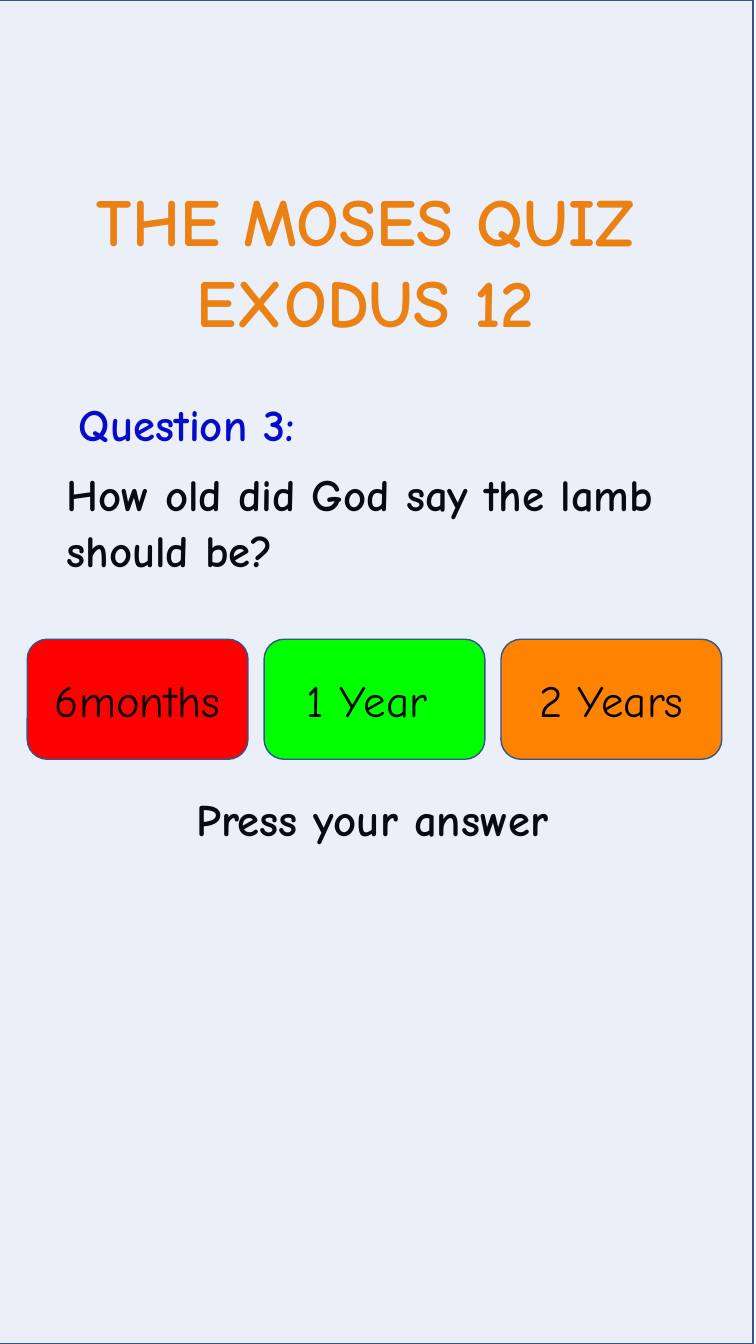
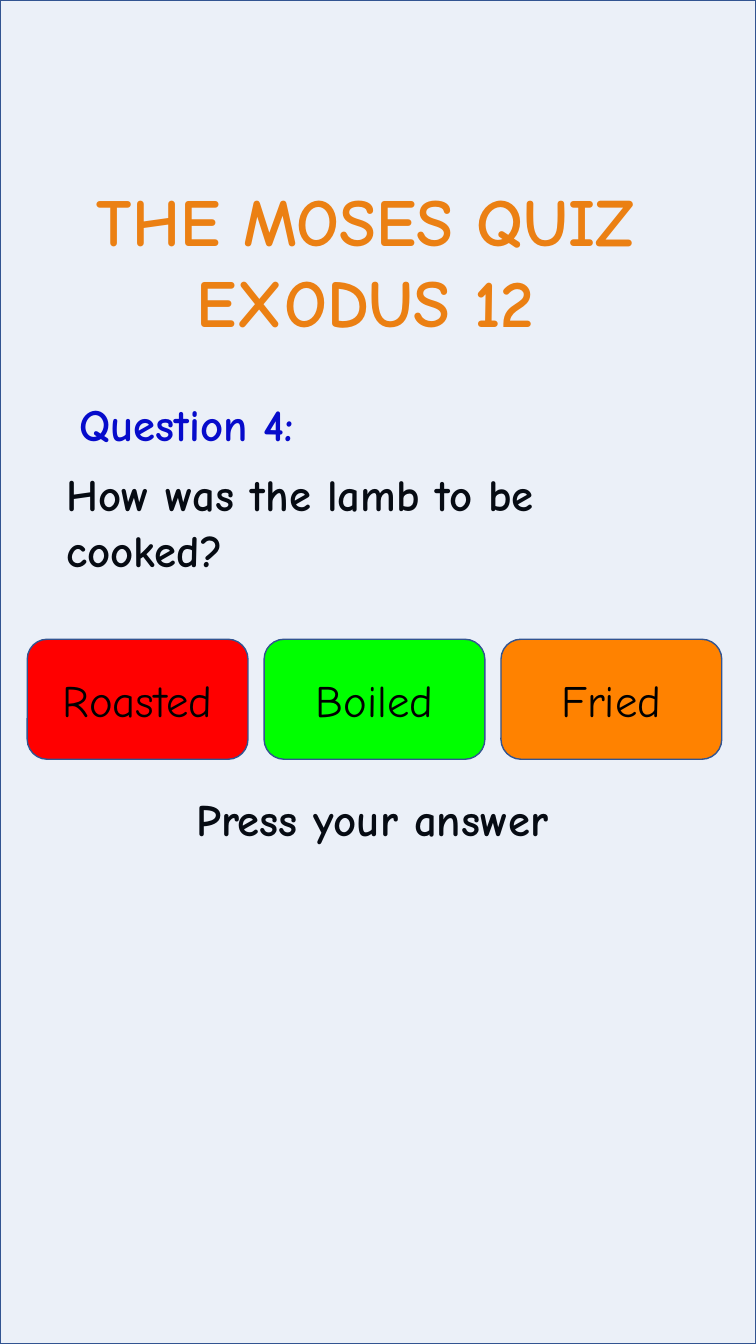
from lxml import etree
from pptx import Presentation
from pptx import util as u
from pptx.dml.color import RGBColor
from pptx.enum import shapes, text
from pptx.oxml import ns

# Shared style
FONT = "Comic Neue"
ORANGE, RED, GREEN = "FF8200", "FF0000", "00FF00"
BLUE, BLACK = "0000CC", "000000"
TINT, OUTLINE = "4472C4", "325491"
WIDTH, HEIGHT = 7.5, 13.33
TITLE = "THE MOSES QUIZ \nEXODUS 12 "
PROMPT = "Press your answer"

# Answer buttons
BUTTON_COLORS = (RED, GREEN, ORANGE)
BUTTON_LEFT, BUTTON_TOP, BUTTON_STEP = 0.27, 6.34, 2.35
BUTTON_WIDTH, BUTTON_HEIGHT = 2.19, 1.19

# Number, question, answers, left edge of the tint panel
QUESTIONS = (
    (3, "How old did God say the lamb should be?",
     ("6months", "1 Year ", "2 Years"), -0.03),
    (4, "How was the lamb to be cooked?",
     ("Roasted", "Boiled", "Fried"), 0),
)


def rgb(value):
    return RGBColor.from_string(value)


def write(shape, content, size=32, color=BLACK, bold=True, centered=False,
          spacing=None, before=None):
    """Fill a shape with text and format every paragraph alike."""
    shape.text_frame.text = content
    for paragraph in shape.text_frame.paragraphs:
        paragraph.alignment = (text.PP_ALIGN.CENTER if centered
                               else text.PP_ALIGN.LEFT)
        paragraph.line_spacing = spacing
        paragraph.space_before = before
        for run in paragraph.runs:
            run.font.name = FONT
            run.font.size = u.Pt(size)
            run.font.bold = bold
            run.font.color.rgb = rgb(color)


def add_text(slide, box, content, wrap=True, **style):
    shape = slide.shapes.add_textbox(*map(u.Inches, box))
    shape.text_frame.word_wrap = wrap
    write(shape, content, **style)


def add_box(slide, kind, box, color, opacity=None):
    shape = slide.shapes.add_shape(kind, *map(u.Inches, box))
    shape.shadow.inherit = False
    shape.fill.solid()
    shape.fill.fore_color.rgb = rgb(color)
    shape.line.color.rgb = rgb(OUTLINE)
    shape.line.width = u.Pt(1)
    if opacity is not None:
        fill_color = shape.fill._xPr.find(".//" + ns.qn("a:srgbClr"))
        alpha = etree.SubElement(fill_color, ns.qn("a:alpha"))
        alpha.set("val", str(opacity * 1000))
    return shape


def add_buttons(slide, answers):
    for index, (answer, color) in enumerate(zip(answers, BUTTON_COLORS)):
        left = BUTTON_LEFT + index * BUTTON_STEP
        button = add_box(slide, shapes.MSO_SHAPE.ROUNDED_RECTANGLE,
                         (left, BUTTON_TOP, BUTTON_WIDTH, BUTTON_HEIGHT), color)
        button.text_frame.vertical_anchor = text.MSO_ANCHOR.MIDDLE
        write(button, answer, bold=False, centered=True)


def add_quiz_slide(presentation, number, question, answers, panel_left):
    slide = presentation.slides.add_slide(presentation.slide_layouts[6])
    # Title and question
    add_text(slide, (0.3, 1.73, 6.89, 1.72), TITLE, wrap=False,
             size=48, color=ORANGE, centered=True)
    add_text(slide, (0.47, 3.89, 2.77, 0.64), f"Question {number}:",
             wrap=False, color=BLUE, centered=True)
    add_text(slide, (0.56, 4.56, 6.36, 1.46), question,
             spacing=u.Pt(40), before=u.Pt(7.5))
    add_text(slide, (1.85, 7.86, 4.22, 0.72), PROMPT,
             spacing=0.9, before=u.Pt(7.5))
    # Tint over the page, then the buttons on top
    add_box(slide, shapes.MSO_SHAPE.RECTANGLE,
            (panel_left, 0, WIDTH, HEIGHT), TINT, opacity=10)
    add_buttons(slide, answers)


def main():
    presentation = Presentation()
    presentation.slide_width = u.Inches(WIDTH)
    presentation.slide_height = u.Inches(HEIGHT)
    for quiz in QUESTIONS:
        add_quiz_slide(presentation, *quiz)
    presentation.save("out.pptx")


if __name__ == "__main__":
    main()
